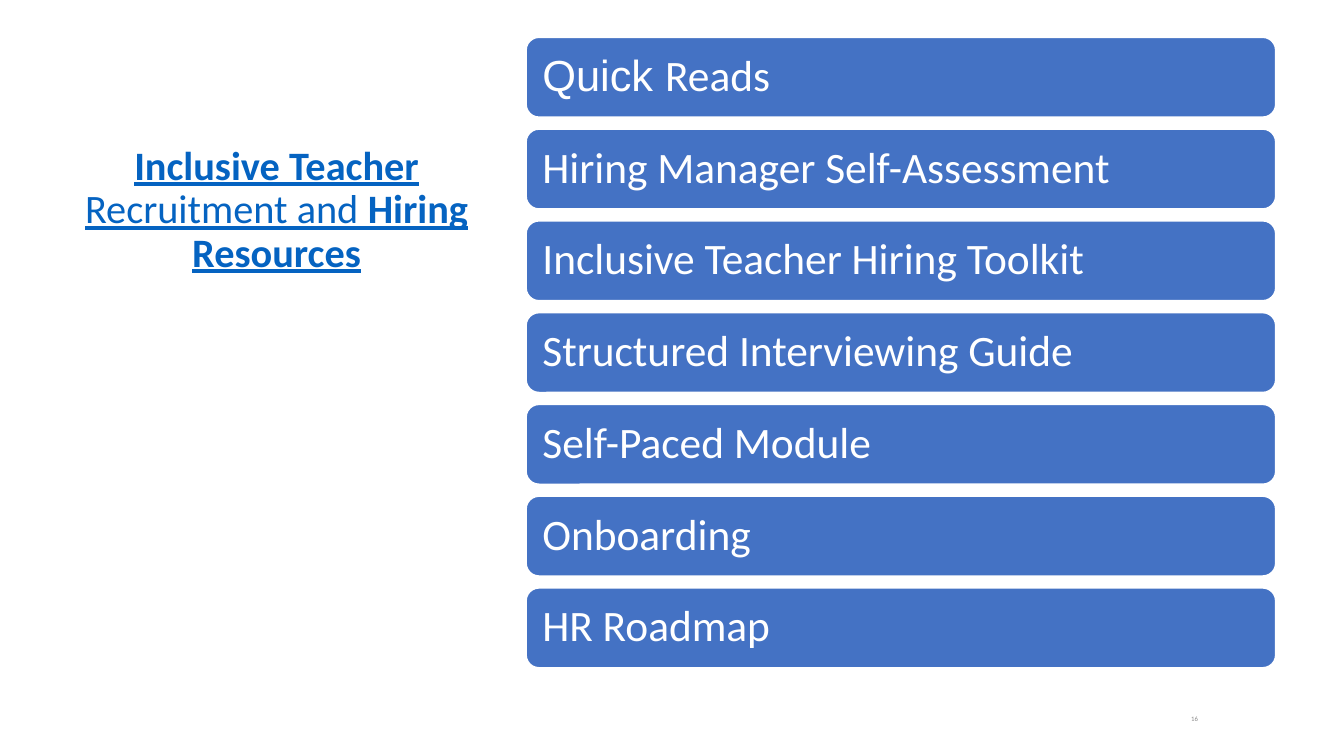
"""Build the slide that lists inclusive teacher recruitment and hiring resources."""
from pptx import Presentation
from pptx import util as u
from pptx.dml.color import RGBColor
from pptx.enum import shapes, text

WHITE = RGBColor(0xFF, 0xFF, 0xFF)
BLUE = RGBColor(0x44, 0x72, 0xC4)
LINK_BLUE = RGBColor(0x05, 0x63, 0xC1)
GRAY = RGBColor(0x88, 0x88, 0x88)


def write(frame, runs, size, color, anchor=text.MSO_ANCHOR.TOP,
          align=text.PP_ALIGN.LEFT, spacing=0.9, after=0, underline=None):
    """Fill a text frame with one paragraph of (words, font, bold) runs."""
    frame.word_wrap = True
    frame.vertical_anchor = anchor
    paragraph = frame.paragraphs[0]
    paragraph.alignment = align
    paragraph.line_spacing = spacing
    paragraph.space_after = u.Pt(after)
    for words, font, bold in runs:
        run = paragraph.add_run()
        run.text = words
        run.font.name = font
        run.font.size = u.Pt(size)
        run.font.bold = bold
        run.font.underline = underline
        run.font.color.rgb = color


deck = Presentation()
deck.slide_width, deck.slide_height = u.Pt(960), u.Pt(540)
slide = deck.slides.add_slide(deck.slide_layouts[6])

heading = slide.shapes.add_textbox(u.Pt(39.6), u.Pt(109.4), u.Pt(316), u.Pt(91.4))
write(heading.text_frame,
      [("Inclusive Teacher ", "Calibri", True),
       ("Recruitment and ", "Calibri", False),
       ("Hiring Resources", "Calibri", True)],
      28.8, LINK_BLUE, anchor=text.MSO_ANCHOR.BOTTOM,
      align=text.PP_ALIGN.CENTER, underline=True)

page_number = slide.shapes.add_textbox(u.Pt(843.8), u.Pt(508.3), u.Pt(103.7), u.Pt(18))
write(page_number.text_frame, [("16", "Calibri", False)], 4.8, GRAY, spacing=0.7, after=6)

resources = [
    [("Quick ", "Arial", False), ("Reads", "Calibri", False)],
    [("Hiring Manager Self-Assessment", "Calibri", False)],
    [("Inclusive Teacher Hiring Toolkit", "Calibri", False)],
    [("Structured Interviewing Guide", "Calibri", False)],
    [("Self-Paced Module", "Calibri", False)],
    [("Onboarding", "Calibri", False)],
    [("HR Roadmap", "Calibri", False)],
]
for row, resource in enumerate(resources):
    bar = slide.shapes.add_shape(shapes.MSO_SHAPE.ROUNDED_RECTANGLE, u.Pt(375.3),
                                 u.Pt(26.2 + 65.55 * row), u.Pt(536.4), u.Pt(58))
    bar.shadow.inherit = False
    bar.fill.solid()
    bar.fill.fore_color.rgb = BLUE
    bar.line.color.rgb = WHITE
    bar.line.width = u.Pt(2)
    frame = bar.text_frame
    frame.margin_left = frame.margin_right = u.Pt(9.3)
    frame.margin_top = frame.margin_bottom = u.Pt(9.3)
    write(frame, resource, 31, WHITE, anchor=text.MSO_ANCHOR.MIDDLE)

deck.save("out.pptx")
